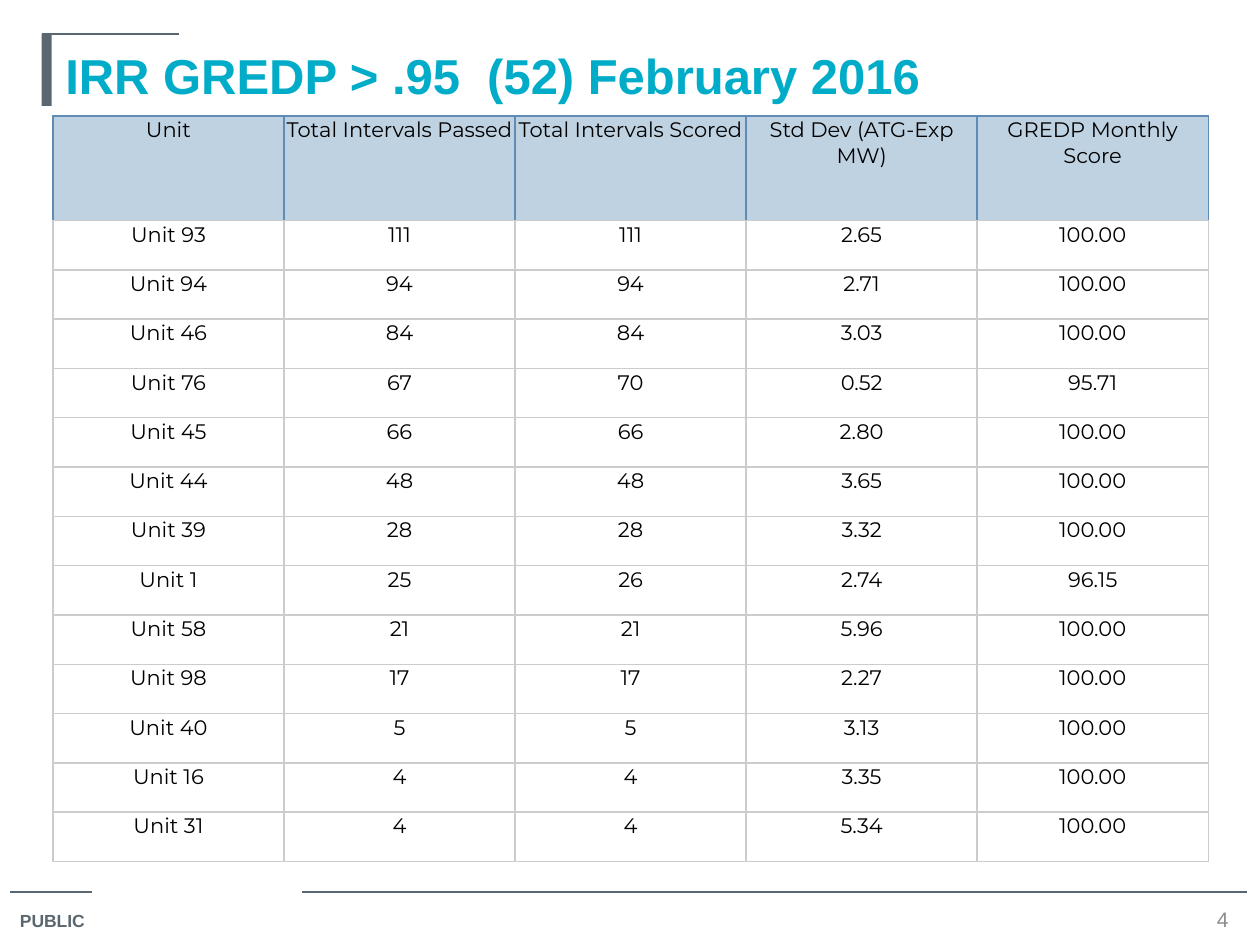
from lxml import etree
from pptx import Presentation
from pptx.dml.color import RGBColor
from pptx.enum.shapes import MSO_CONNECTOR, MSO_SHAPE
from pptx.enum.text import MSO_ANCHOR, PP_ALIGN
from pptx.oxml.ns import qn
from pptx.util import Inches, Pt

STRAIGHT = MSO_CONNECTOR.STRAIGHT
RECTANGLE = MSO_SHAPE.RECTANGLE
TOP, MIDDLE = MSO_ANCHOR.TOP, MSO_ANCHOR.MIDDLE
LEFT, CENTER = PP_ALIGN.LEFT, PP_ALIGN.CENTER

SLATE = RGBColor(0x5B, 0x67, 0x70)
TEAL = RGBColor(0x00, 0xAC, 0xC8)
GRAY = RGBColor(0x8C, 0x8C, 0x8C)
BLACK = RGBColor(0x00, 0x00, 0x00)
HEADER_FILL = RGBColor(0xBF, 0xD2, 0xE2)
HEADER_BORDER = RGBColor(0x60, 0x8B, 0xB4)
GRID = RGBColor(0xCC, 0xCC, 0xCC)


def write_text(frame, text, size, color, font="Arial", bold=False, align=LEFT):
    frame.word_wrap = True
    paragraph = frame.paragraphs[0]
    paragraph.text = text
    paragraph.alignment = align
    paragraph.font.name = font
    paragraph.font.size = Pt(size)
    paragraph.font.bold = bold
    paragraph.font.color.rgb = color


def set_borders(cell, colors):
    properties = cell._tc.get_or_add_tcPr()
    for side, color in zip(("lnL", "lnR", "lnT", "lnB"), colors):
        line = etree.SubElement(properties, qn(f"a:{side}"), w=str(Pt(1)))
        fill = etree.SubElement(line, qn("a:solidFill"))
        etree.SubElement(fill, qn("a:srgbClr"), val=str(color))


presentation = Presentation()
presentation.slide_width = Inches(10)
presentation.slide_height = Inches(7.5)
slide = presentation.slides.add_slide(presentation.slide_layouts[6])
shapes = slide.shapes

# Footer rules and the rule above the title
for start, end, y in ((0.08, 0.73, 7.08), (2.4, 9.9, 7.08), (0.33, 1.42, 0.27)):
    rule = shapes.add_connector(STRAIGHT, Inches(start), Inches(y), Inches(end), Inches(y))
    rule.line.color.rgb = SLATE
    rule.line.width = Pt(0.75)
    etree.SubElement(rule._element.spPr, qn("a:effectLst"))

# Title bar
bar = shapes.add_shape(RECTANGLE, Inches(0.33), Inches(0.27), Inches(0.08), Inches(0.57))
bar.shadow.inherit = False
bar.fill.solid()
bar.fill.fore_color.rgb = SLATE
bar.line.fill.background()

# Title
title = shapes.add_textbox(Inches(0.42), Inches(0.27), Inches(9.25), Inches(0.73))
title.text_frame.margin_top = Inches(0.09)
write_text(title.text_frame, "IRR GREDP > .95  (52) February 2016", 28, TEAL, bold=True)

# Classification label
label = shapes.add_textbox(Inches(0.06), Inches(7.17), Inches(0.77), Inches(0.28))
write_text(label.text_frame, "PUBLIC", 10, SLATE, bold=True)

# Page number
number = shapes.add_textbox(Inches(9.58), Inches(7.18), Inches(0.25), Inches(0.23))
frame = number.text_frame
frame.margin_left = frame.margin_right = frame.margin_top = frame.margin_bottom = 0
frame.vertical_anchor = MIDDLE
write_text(frame, "4", 12, GRAY, align=CENTER)

# Score table
rows = (
    ("Unit", "Total Intervals Passed", "Total Intervals Scored",
     "Std Dev (ATG-Exp MW)", "GREDP Monthly Score"),
    ("Unit 93", "111", "111", "2.65", "100.00"),
    ("Unit 94", "94", "94", "2.71", "100.00"),
    ("Unit 46", "84", "84", "3.03", "100.00"),
    ("Unit 76", "67", "70", "0.52", "95.71"),
    ("Unit 45", "66", "66", "2.80", "100.00"),
    ("Unit 44", "48", "48", "3.65", "100.00"),
    ("Unit 39", "28", "28", "3.32", "100.00"),
    ("Unit 1", "25", "26", "2.74", "96.15"),
    ("Unit 58", "21", "21", "5.96", "100.00"),
    ("Unit 98", "17", "17", "2.27", "100.00"),
    ("Unit 40", "5", "5", "3.13", "100.00"),
    ("Unit 16", "4", "4", "3.35", "100.00"),
    ("Unit 31", "4", "4", "5.34", "100.00"),
)
table_height, header_height = Inches(5.92), Inches(0.83)
table = shapes.add_table(len(rows), len(rows[0]), Inches(0.42), Inches(0.92),
                         Inches(9.17), table_height).table
table.first_row = False
table.horz_banding = False

for row_index, values in enumerate(rows):
    is_header = row_index == 0
    body_height = (table_height - header_height) // (len(rows) - 1)
    table.rows[row_index].height = header_height if is_header else body_height
    edge = HEADER_BORDER if is_header else GRID
    for column_index, value in enumerate(values):
        cell = table.cell(row_index, column_index)
        cell.margin_left = cell.margin_right = cell.margin_top = Inches(0.01)
        cell.margin_bottom = 0
        cell.vertical_anchor = TOP
        write_text(cell.text_frame, value, 12, BLACK, font="Montserrat", align=CENTER)
        set_borders(cell, (edge, edge, edge, GRID))
        if is_header:
            cell.fill.solid()
            cell.fill.fore_color.rgb = HEADER_FILL
        else:
            cell.fill.background()

presentation.save("out.pptx")
